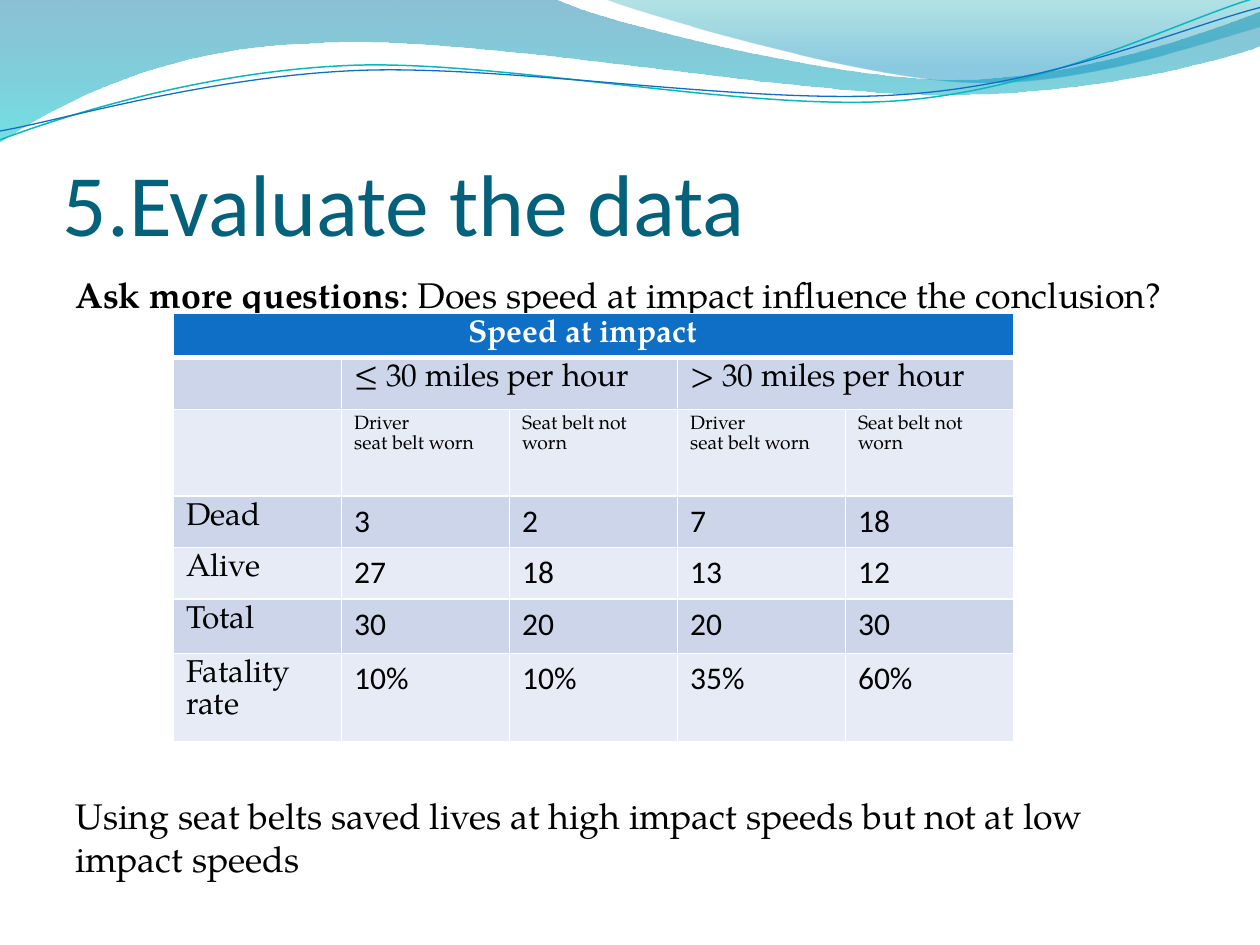
import pptx
import pptx.dml.color
import pptx.enum.text
import pptx.oxml.ns
import pptx.util
from lxml import etree

Cm, Pt = pptx.util.Cm, pptx.util.Pt
RGBColor = pptx.dml.color.RGBColor
qn = pptx.oxml.ns.qn
ANCHOR = pptx.enum.text.MSO_ANCHOR
ALIGN = pptx.enum.text.PP_ALIGN

WHITE = RGBColor(0xFF, 0xFF, 0xFF)
BLACK = RGBColor(0, 0, 0)
TITLE = RGBColor(0x04, 0x61, 0x7B)
BLUE = RGBColor(0x0F, 0x6F, 0xC6)
TEAL = RGBColor(0x0A, 0xB8, 0xBF)
DEEP_BLUE = RGBColor(0, 0x74, 0xA1)
AQUA = RGBColor(0, 0xC6, 0xCF)
SEA = RGBColor(0, 0xA1, 0xA9)
SKY = RGBColor(0, 0x8B, 0xBF)
BANDS = [RGBColor(0xE7, 0xEB, 0xF5), RGBColor(0xCC, 0xD5, 0xEA)]
SERIF, SANS = "TeX Gyre Pagella", "Calibri"
GRID = 10

BACK_WAVE = [
    (0, 0), (4.4, -0.01),
    (4.76, 0.17, 6.64, 0.63, 7.58, 0.63), (8.53, 0.63, 9.58, 0.26, 10, 0.09),
    (10.01, 0.36),
    (9.83, 0.44, 8.7, 0.76, 7.46, 0.75), (6.22, 0.75, 3.82, 0.28, 2.57, 0.34),
    (1.29, 0.36, 0.46, 0.83, -0.01, 1.13),
]
FRONT_WAVE = [
    (4.79, -0.01), (5.09, 0.11, 6.82, 0.62, 7.69, 0.65),
    (8.56, 0.69, 9.61, 0.32, 10, 0.21), (10, 0),
]
TEAL_LINE = [
    (0, 1.11), (0.48, 0.93, 1.58, 0.57, 2.77, 0.52),
    (3.95, 0.47, 5.93, 0.89, 7.13, 0.8), (8.33, 0.71, 9.38, 0.15, 9.98, -0.02),
]
BLUE_LINE = [
    (0, 1.04), (0.47, 0.96, 1.64, 0.61, 2.83, 0.56),
    (4.03, 0.51, 5.97, 0.84, 7.17, 0.75), (8.36, 0.67, 9.41, 0.21, 10, 0.06),
]

BELT_HEADS = ["Driver\nseat belt worn", "Seat belt not worn"]
ROWS = [
    ["Speed at impact", "", "", "", ""],
    ["", "≤ 30 miles per hour", "", "> 30 miles per hour", ""],
    [""] + BELT_HEADS * 2,
    ["Dead", "3", "2", "7", "18"],
    ["Alive", "27", "18", "13", "12"],
    ["Total", "30", "20", "20", "30"],
    ["Fatality rate", "10%", "10%", "35%", "60%"],
]
ROW_HEIGHTS = [0.84, 1.04, 1.75, 1.04, 1.04, 1.09, 1.04]


def write(p, text, size=18, font=SERIF, color=BLACK, bold=False):
    r = p.add_run()
    r.text = text
    r.font.size = Pt(size)
    r.font.name = font
    r.font.color.rgb = color
    r.font.bold = bold


def add_box(s, x, y, w, h):
    tf = s.shapes.add_textbox(x, y, w, h).text_frame
    tf.word_wrap = True
    return tf


def add_outline(s, x, y, w, segments, close):
    unit = w / GRID
    segments = [[(round(x + px * unit), round(y + py * unit))
                 for px, py in zip(seg[::2], seg[1::2])] for seg in segments]
    ends = [seg[-1] for seg in segments]
    builder = s.shapes.build_freeform(*ends[0])
    builder.add_line_segments(ends[1:], close=close)
    sp = builder.convert_to_shape()
    sp.shadow.inherit = False
    steps = list(sp._element.iter(qn("a:lnTo")))
    for step, seg in zip(steps, segments[1:]):
        if len(seg) == 3:
            curve = etree.Element(qn("a:cubicBezTo"))
            for px, py in seg:
                etree.SubElement(curve, qn("a:pt"), x=str(px - sp.left), y=str(py - sp.top))
            step.getparent().replace(step, curve)
    return sp


def add_banner(s, x, y, w):
    waves = [
        (BACK_WAVE, [(0, DEEP_BLUE, 45), (1, AQUA, 55)]),
        (FRONT_WAVE, [(0, SEA, 30), (0.8, SKY, 45)]),
    ]
    for segments, stops in waves:
        sp = add_outline(s, x, y, w, segments, True)
        sp.line.fill.background()
        sp.fill.gradient()
        sp.fill.gradient_angle = 270
        for stop, (position, color, _) in zip(sp.fill.gradient_stops, stops):
            stop.position = position
            stop.color.rgb = color
        clrs = sp._element.spPr.iter(qn("a:srgbClr"))
        for clr, (_, _, opacity) in zip(clrs, stops):
            etree.SubElement(clr, qn("a:alpha"), val=str(opacity * 1000))
    for segments, color, width in [(TEAL_LINE, TEAL, 0.85), (BLUE_LINE, BLUE, 0.75)]:
        sp = add_outline(s, x, y, w, segments, False)
        sp.fill.background()
        sp.line.color.rgb = color
        sp.line.width = Pt(width)


def add_title(s, x, y, w, h):
    tf = add_box(s, x, y, w, h)
    tf.margin_left = tf.margin_right = tf.margin_bottom = 0
    tf.vertical_anchor = ANCHOR.BOTTOM
    write(tf.paragraphs[0], "5.Evaluate the data", size=50, font=SANS, color=TITLE)


def add_body(s, x, y, w, h):
    tf = add_box(s, x, y, w, h)
    p = tf.paragraphs[0]
    write(p, "Ask more questions", size=20.4, bold=True)
    write(p, ": Does speed at impact influence the conclusion?", size=20.4)
    p = tf.add_paragraph()
    p.space_before = Pt(273)
    write(p, "Using seat belts saved lives at high impact speeds but not at low impact speeds",
          size=20.4)


def set_borders(cell, widths):
    tcPr = cell._tc.get_or_add_tcPr()
    for tag, width in zip(("a:lnL", "a:lnR", "a:lnT", "a:lnB"), widths):
        ln = etree.SubElement(tcPr, qn(tag), w=str(Pt(width)))
        fill = etree.SubElement(ln, qn("a:solidFill"))
        etree.SubElement(fill, qn("a:srgbClr"), val=str(WHITE))


def cell_format(row, col):
    if row == 0:
        return dict(color=WHITE, bold=True)
    if row == 2:
        return dict(size=11)
    if row > 2 and col > 0:
        return dict(font=SANS)
    return {}


def add_impact_table(s, x, y, w):
    cols = len(ROWS[0])
    h = Cm(sum(ROW_HEIGHTS))
    table = s.shapes.add_table(len(ROWS), cols, x, y, w, h).table
    for column in table.columns:
        column.width = round(w / cols)
    for i, (texts, height) in enumerate(zip(ROWS, ROW_HEIGHTS)):
        table.rows[i].height = Cm(height)
        for j, text in enumerate(texts):
            cell = table.cell(i, j)
            set_borders(cell, (1, 1, 3 if i == 1 else 1, 3 if i == 0 else 1))
            cell.fill.solid()
            cell.fill.fore_color.rgb = BANDS[i % 2] if i else BLUE
            tf = cell.text_frame
            for k, line in enumerate(text.split("\n") if text else []):
                p = tf.add_paragraph() if k else tf.paragraphs[0]
                write(p, line, **cell_format(i, j))
    heading = table.cell(0, 0)
    heading.text_frame.paragraphs[0].alignment = ALIGN.CENTER
    heading.margin_right = Cm(0.7)
    heading.margin_bottom = 0
    for row, first, last in [(0, 0, 4), (1, 1, 2), (1, 3, 4)]:
        table.cell(row, first).merge(table.cell(row, last))


def main():
    prs = pptx.Presentation()
    prs.slide_width, prs.slide_height = Cm(25.4), Cm(19.05)
    s = prs.slides.add_slide(prs.slide_layouts[6])
    add_banner(s, 0, 0, prs.slide_width)
    add_title(s, Cm(1.27), Cm(1.95), Cm(22.86), Cm(3.17))
    add_body(s, Cm(1.27), Cm(5.38), Cm(22.86), Cm(12.19))
    add_impact_table(s, Cm(3.5), Cm(6.32), Cm(16.93))
    prs.save("out.pptx")


if __name__ == "__main__":
    main()
